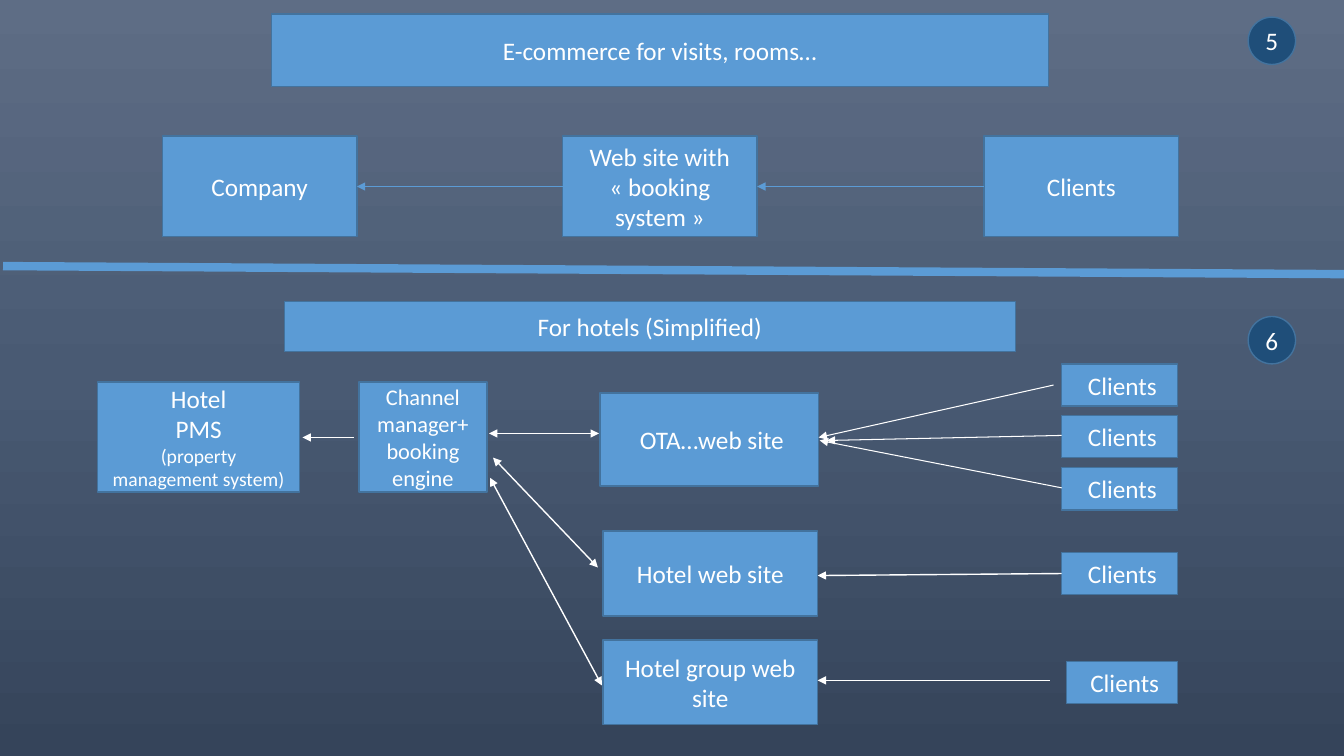
from dataclasses import dataclass

from lxml.etree import SubElement
from copy import deepcopy
from pptx import Presentation
from pptx.dml.color import RGBColor
from pptx.enum.shapes import MSO_CONNECTOR, MSO_SHAPE
from pptx.enum.text import MSO_ANCHOR, MSO_AUTO_SIZE, PP_ALIGN
from pptx.oxml.ns import qn
from pptx.util import Inches, Pt


@dataclass(frozen=True)
class Theme:
    """Colours, font and type sizes of the slide."""
    font: str = "Calibri"
    body: int = 18
    compact: int = 16
    small: int = 14
    text: str = "FFFFFF"
    box: str = "5B9BD5"
    outline: str = "43739E"
    badge: str = "1F4E79"
    background: tuple = ((0, "5E6D85"), (0.5, "495A73"), (1, "35445A"))


THEME = Theme()


def paint_background(page):
    """Fill the page with a vertical three-stop gradient."""
    fill = page.background.fill
    fill.gradient()
    fill.gradient_angle = 270
    stop_list = page.element.find(".//" + qn("a:gsLst"))
    stop_list.insert(1, deepcopy(stop_list[0]))
    for stop, (position, color) in zip(fill.gradient_stops, THEME.background):
        stop.position = position
        stop.color.rgb = RGBColor.from_string(color)


def style_box(box, lines, fill=THEME.box, size=THEME.body, indent=0.0, margin=0.1):
    """Colour a box and fill it with centred lines, each a text or a (text, size) pair."""
    box.fill.solid()
    box.fill.fore_color.rgb = RGBColor.from_string(fill)
    box.line.color.rgb = RGBColor.from_string(THEME.outline)
    box.line.width = Pt(1)
    frame = box.text_frame
    frame.word_wrap = True
    frame.auto_size = MSO_AUTO_SIZE.NONE
    frame.vertical_anchor = MSO_ANCHOR.MIDDLE
    frame.margin_left = Inches(margin + indent)
    frame.margin_right = Inches(margin)
    frame.margin_top = frame.margin_bottom = Inches(0.05)
    for index, line in enumerate(lines):
        text, line_size = line if isinstance(line, tuple) else (line, size)
        para = frame.paragraphs[0] if index == 0 else frame.add_paragraph()
        para.text = text
        para.alignment = PP_ALIGN.CENTER
        para.font.name = THEME.font
        para.font.size = Pt(line_size)
        para.font.color.rgb = RGBColor.from_string(THEME.text)


def add_title(page, text, left, top, width, height):
    """Place the title placeholder as a filled heading bar."""
    title = page.shapes.title
    title.left, title.top = Inches(left), Inches(top)
    title.width, title.height = Inches(width), Inches(height)
    style_box(title, [text])


def add_box(page, lines, left, top, width, height, shape=MSO_SHAPE.RECTANGLE, **style):
    """Add a filled shape with centred text."""
    box = page.shapes.add_shape(
        shape, Inches(left), Inches(top), Inches(width), Inches(height))
    box.shadow.inherit = False
    style_box(box, lines, **style)


def add_badge(page, number, top):
    """Add a round section number at the right edge."""
    add_box(page, [number], 12.38, top, 0.47, 0.47,
            shape=MSO_SHAPE.OVAL, fill=THEME.badge, margin=0)


def add_line(page, start, end, color=THEME.text, width=1.0, ends=()):
    """Add a straight line with triangles at the named ends."""
    line = page.shapes.add_connector(
        MSO_CONNECTOR.STRAIGHT, *(Inches(value) for value in (*start, *end)))
    line.line.color.rgb = RGBColor.from_string(color)
    line.line.width = Pt(width)
    properties = line.element.spPr
    outline = properties.find(qn("a:ln"))
    for end_name in ends:
        SubElement(outline, qn(f"a:{end_name}"), type="triangle")
    SubElement(properties, qn("a:effectLst"))


def add_commerce_flow(page):
    """Draw the booking flow from clients to company."""
    add_title(page, "E-commerce for visits, rooms…", 2.69, 0.14, 7.71, 0.72)
    for text, left in (("Company", 1.61),
                       ("Web site with «\u00a0booking system\u00a0»", 5.58),
                       ("Clients", 9.76)):
        add_box(page, [text], left, 1.35, 1.93, 1)
    for start, end in ((9.76, 7.51), (5.58, 3.54)):
        add_line(page, (start, 1.85), (end, 1.85), THEME.box, 0.5, ["tailEnd"])
    add_badge(page, "5", 0.17)


def add_hotel_flow(page):
    """Draw the simplified hotel distribution flow."""
    add_box(page, ["For hotels (Simplified)"], 2.82, 2.99, 7.25, 0.5)
    add_box(page, ["Hotel", "PMS", ("(property management system)", THEME.small)],
            0.97, 3.79, 2, 1.09)
    add_box(page, ["Channel manager+ booking engine"], 3.56, 3.79, 1.27, 1.09,
            size=THEME.compact)
    add_box(page, ["OTA…web site"], 5.95, 3.9, 2.17, 0.92, indent=0.05)
    for text, top in (("Hotel web site", 5.27), ("Hotel group web site", 6.35)):
        add_box(page, [text], 5.98, top, 2.13, 0.84)
    for left, top in ((10.53, 3.61), (10.53, 4.12), (10.53, 4.64),
                      (10.53, 5.48), (10.58, 6.56)):
        add_box(page, ["Clients"], left, top, 11.68 - left, 0.42, indent=0.05)

    for start, end in (((8.12, 4.34), (10.45, 3.82)),
                       ((8.2, 4.37), (10.53, 4.32)),
                       ((8.13, 4.37), (10.53, 4.84))):
        add_line(page, start, end, width=0.75, ends=["headEnd"])
    for start, end in (((3, 4.34), (3.51, 4.34)),
                       ((8.11, 5.71), (10.53, 5.69)),
                       ((8.11, 6.75), (10.41, 6.75))):
        add_line(page, start, end, ends=["headEnd"])
    for start, end in (((4.85, 4.3), (5.94, 4.3)),
                       ((4.89, 4.54), (5.93, 5.63)),
                       ((4.86, 4.74), (5.97, 6.8))):
        add_line(page, start, end, ends=["headEnd", "tailEnd"])
    add_badge(page, "6", 3.14)


def main():
    """Build the slide and save the deck."""
    deck = Presentation()
    deck.slide_width, deck.slide_height = Inches(13.33), Inches(7.5)
    page = deck.slides.add_slide(deck.slide_layouts.get_by_name("Title Only"))
    paint_background(page)
    add_commerce_flow(page)
    add_line(page, (0.03, 2.64), (13.36, 2.72), THEME.box, 6)
    add_hotel_flow(page)
    deck.save("out.pptx")


if __name__ == "__main__":
    main()
